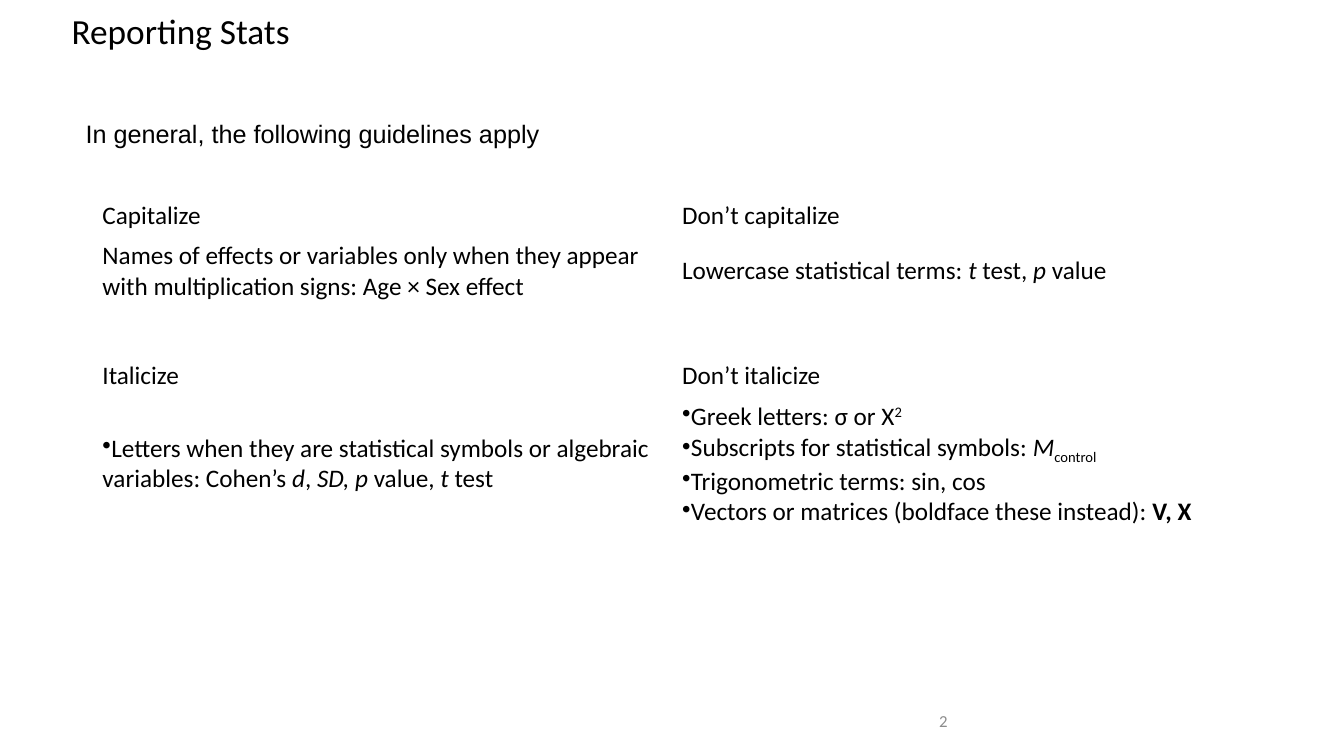
from pptx import Presentation
from pptx.dml.color import RGBColor
from pptx.enum import text
from pptx.oxml import parse_xml
from pptx.oxml.ns import nsdecls
from pptx.util import Pt

COLORS = {"ink": "000000", "page_number": "8C8C8C"}
ITALIC, BOLD, SUPER, SUB = "italic", "bold", "super", "sub"
BASELINES = {SUPER: "30000", SUB: "-25000"}

CAPITALIZE = [
    ("Capitalize", "Don’t capitalize"),
    (
        [[("Names of effects or variables only when they appear with "
           "multiplication signs: Age × Sex effect", None)]],
        [[("Lowercase statistical terms: ", None), ("t", ITALIC),
          (" test, ", None), ("p", ITALIC), (" value", None)]],
    ),
]
ITALICIZE = [
    ("Italicize", "Don’t italicize"),
    (
        [[("Letters when they are statistical symbols or algebraic variables: Cohen’s ", None),
          ("d", ITALIC), (", ", None), ("SD, p ", ITALIC), ("value, ", None),
          ("t", ITALIC), (" test", None)]],
        [
            [("Greek letters: σ or Χ", None), ("2", SUPER)],
            [("Subscripts for statistical symbols: ", None), ("M", ITALIC), ("control", SUB)],
            [("Trigonometric terms: sin, cos", None)],
            [("Vectors or matrices (boldface these instead): ", None), ("V, X", BOLD)],
        ],
    ),
]


def style(paragraph, size, face="Calibri", color="ink", align=text.PP_ALIGN.LEFT):
    paragraph.alignment = align
    paragraph.font.size = Pt(size)
    paragraph.font.name = face
    paragraph.font.color.rgb = RGBColor.from_string(COLORS[color])


def add_bullet(paragraph):
    properties = paragraph._p.get_or_add_pPr()
    properties.set("marL", "0")
    properties.set("indent", "0")
    properties.insert(0, parse_xml(f'<a:buChar {nsdecls("a")} char="•"/>'))


def write_guideline(paragraph, pieces, bulleted):
    for words, emphasis in pieces:
        run = paragraph.add_run()
        run.text = words
        if emphasis == ITALIC:
            run.font.italic = True
        elif emphasis == BOLD:
            run.font.bold = True
        elif emphasis in BASELINES:
            run._r.get_or_add_rPr().set("baseline", BASELINES[emphasis])
    style(paragraph, 18)
    if bulleted:
        add_bullet(paragraph)


def place_title(slide, left, top, width, height):
    title = slide.shapes.title
    title.left, title.top, title.width, title.height = map(Pt, (left, top, width, height))
    frame = title.text_frame
    frame.text = "Reporting Stats"
    frame.auto_size = text.MSO_AUTO_SIZE.NONE
    frame.vertical_anchor = text.MSO_ANCHOR.TOP
    heading = frame.paragraphs[0]
    style(heading, 25.2)
    heading.line_spacing = 0.7


def add_line(slide, words, left, top, width, height, size, anchor, **look):
    frame = slide.shapes.add_textbox(*map(Pt, (left, top, width, height))).text_frame
    frame.word_wrap = True
    frame.vertical_anchor = anchor
    frame.text = words
    style(frame.paragraphs[0], size, **look)


def add_guidelines(slide, guidelines, left, top, width, row_heights, bulleted=False):
    grid = slide.shapes.add_table(
        len(guidelines), 2, Pt(left), Pt(top), Pt(width), Pt(sum(row_heights))
    ).table
    grid.first_row = grid.horz_banding = False
    for row, height in zip(grid.rows, row_heights):
        row.height = Pt(height)
    headings, rules = guidelines
    for column, (heading, rule) in enumerate(zip(headings, rules)):
        for row, lines in enumerate(([[(heading, None)]], rule)):
            cell = grid.cell(row, column)
            cell.fill.background()
            cell.vertical_anchor = text.MSO_ANCHOR.MIDDLE
            for index, pieces in enumerate(lines):
                frame = cell.text_frame
                paragraph = frame.add_paragraph() if index else frame.paragraphs[0]
                write_guideline(paragraph, pieces, bulleted and row == 1)


def main():
    deck = Presentation()
    deck.slide_width, deck.slide_height = Pt(960), Pt(540)
    slide = deck.slides.add_slide(deck.slide_layouts[5])
    place_title(slide, 44, 11.5, 612, 54)
    add_line(slide, "2", 516, 500.5, 168, 28.75, 12, text.MSO_ANCHOR.MIDDLE,
             color="page_number", align=text.PP_ALIGN.RIGHT)
    add_guidelines(slide, ITALICIZE, 66, 254, 828, (29, 93.5), bulleted=True)
    add_guidelines(slide, CAPITALIZE, 66, 139.5, 828, (29, 50.5))
    add_line(slide, "In general, the following guidelines apply", 54, 81, 342, 51, 18,
             text.MSO_ANCHOR.TOP, face="Arial")
    deck.save("out.pptx")


if __name__ == "__main__":
    main()
